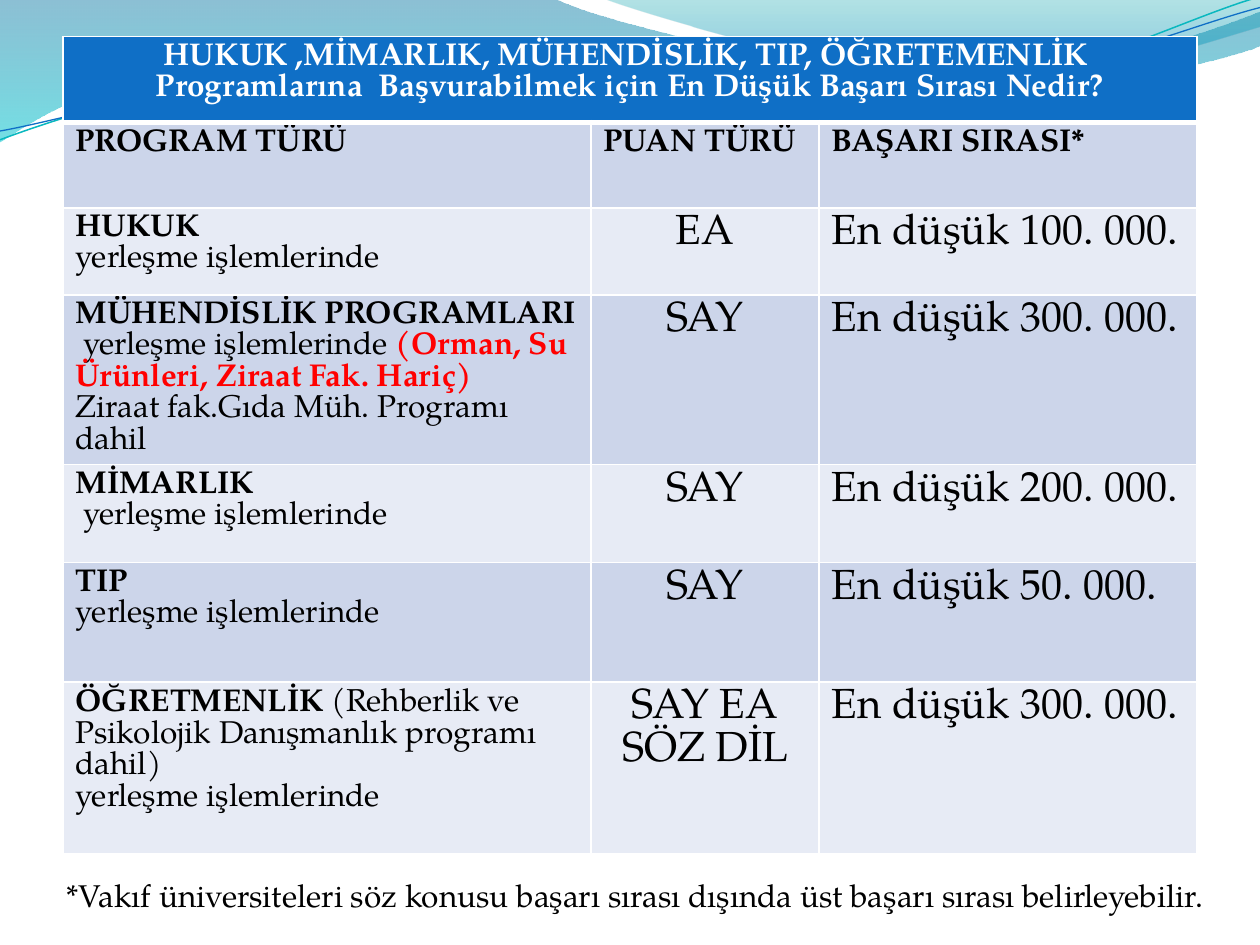
from dataclasses import dataclass

from lxml import etree
from pptx import Presentation
from pptx.dml.color import RGBColor
from pptx.enum import text
from pptx.oxml import ns
from pptx.util import Inches, Pt


@dataclass(frozen=True)
class Theme:
    font: str = "TeX Gyre Pagella"
    body: int = 18
    large: int = 24
    white: str = "FFFFFF"
    black: str = "000000"
    red: str = "FF0000"
    blue: str = "0F6FC6"
    aqua: str = "0AB8BF"
    bands: tuple = ("CCD5EA", "E7EBF5")
    # gradient stops: position %, colour, opacity %
    wave: tuple = ((0, "0074A1", 45), (100, "00C6CF", 55))
    crest: tuple = ((0, "00A1A9", 30), (80, "008BBF", 45))


THEME = Theme()

# Each step is a line end (x, y) or a Bézier step (x1, y1, x2, y2, x, y).
WAVE = [(0, 0), (4.4, -0.01), (4.76, 0.17, 6.64, 0.63, 7.58, 0.63),
        (8.53, 0.63, 9.58, 0.26, 10, 0.09), (10.01, 0.36),
        (9.83, 0.44, 8.7, 0.76, 7.46, 0.75), (6.22, 0.75, 3.82, 0.28, 2.57, 0.34),
        (1.29, 0.36, 0.46, 0.83, -0.01, 1.13)]
CREST = [(4.79, -0.01), (5.09, 0.11, 6.82, 0.62, 7.69, 0.65),
         (8.56, 0.69, 9.61, 0.32, 10, 0.21), (10, 0)]
AQUA_LINE = [(0, 1.11), (0.48, 0.93, 1.58, 0.57, 2.77, 0.52),
             (3.95, 0.47, 5.93, 0.89, 7.13, 0.8), (8.33, 0.71, 9.38, 0.15, 9.98, -0.02)]
BLUE_LINE = [(0, 1.04), (0.47, 0.96, 1.64, 0.61, 2.83, 0.56),
             (4.03, 0.51, 5.97, 0.84, 7.17, 0.75), (8.36, 0.67, 9.41, 0.21, 10, 0.06)]

COLUMNS = (4.19, 1.81, 3)
ROWS = (0.68, 0.68, 0.69, 1.34, 0.78, 0.95, 1.36)
TITLE = ("HUKUK ,MİMARLIK, MÜHENDİSLİK, TIP, ÖĞRETEMENLİK ",
         "Programlarına  Başvurabilmek için En Düşük Başarı Sırası Nedir?")
HEADINGS = ("PROGRAM TÜRÜ", "PUAN TÜRÜ", "BAŞARI SIRASI*")
PLACEMENT = "yerleşme işlemlerinde"
# Program paragraphs as (text, bold, colour) spans, then score type and rank.
PROGRAMS = [
    ([[("HUKUK", True)], [(PLACEMENT, False)]], "EA", "100. 000."),
    ([[("MÜHENDİSLİK PROGRAMLARI", True)],
      [(" ", True), (PLACEMENT + " ", False),
       ("(Orman, Su Ürünleri, Ziraat Fak. Hariç)", True, THEME.red)],
      [("Ziraat fak.Gıda Müh. Programı dahil", False)]], "SAY", "300. 000."),
    ([[("MİMARLIK", True)], [(" " + PLACEMENT, False)]], "SAY", "200. 000."),
    ([[("TIP", True)], [(PLACEMENT, False)]], "SAY", "50. 000."),
    ([[("ÖĞRETMENLİK", True),
       (" (Rehberlik ve Psikolojik Danışmanlık programı dahil)", False)],
      [(PLACEMENT, False)]], "SAY EA SÖZ DİL", "300. 000."),
]
FOOTNOTE = ("*Vakıf üniversiteleri söz konusu başarı sırası dışında "
            "üst başarı sırası belirleyebilir.")


def rgb(colour):
    return RGBColor.from_string(colour)


def add_curve(page, steps, close):
    """Build a freeform through the step ends, then bend its Bézier steps."""
    ends = [(Inches(step[-2]), Inches(step[-1])) for step in steps]
    builder = page.shapes.build_freeform(*ends[0])
    builder.add_line_segments(ends[1:], close=close)
    shape = builder.convert_to_shape()
    shape.shadow.inherit = False
    segments = list(shape.element.spPr.iter(ns.qn("a:lnTo")))
    for step, segment in zip(steps[1:], segments):
        if len(step) == 2:
            continue
        segment.tag = ns.qn("a:cubicBezTo")
        for place, (x, y) in enumerate((step[:2], step[2:4])):
            point = etree.Element(ns.qn("a:pt"), x=str(Inches(x) - shape.left),
                                  y=str(Inches(y) - shape.top))
            segment.insert(place, point)
    return shape


def add_wave(page, steps, stops):
    """Add a closed shape with a translucent top-to-bottom gradient."""
    shape = add_curve(page, steps, True)
    shape.line.fill.background()
    shape.fill.gradient()
    gradient = shape.element.spPr.find(ns.qn("a:gradFill"))
    stop_list = gradient.find(ns.qn("a:gsLst"))
    for stop in list(stop_list):
        stop_list.remove(stop)
    for position, colour, opacity in stops:
        stop = etree.SubElement(stop_list, ns.qn("a:gs"), pos=str(position * 1000))
        tint = etree.SubElement(stop, ns.qn("a:srgbClr"), val=colour)
        etree.SubElement(tint, ns.qn("a:alpha"), val=str(opacity * 1000))
    gradient.find(ns.qn("a:lin")).set("ang", str(90 * 60000))


def add_wave_line(page, steps, colour, width):
    shape = add_curve(page, steps, False)
    shape.fill.background()
    shape.line.color.rgb = rgb(colour)
    shape.line.width = Pt(width)


def style_cell(cell, colour, bottom=1):
    properties = cell._tc.get_or_add_tcPr()
    for side, width in (("L", 1), ("R", 1), ("T", 1), ("B", bottom)):
        border = etree.SubElement(properties, ns.qn("a:ln" + side), w=str(Pt(width)))
        fill = etree.SubElement(border, ns.qn("a:solidFill"))
        etree.SubElement(fill, ns.qn("a:srgbClr"), val=THEME.white)
    cell.fill.solid()
    cell.fill.fore_color.rgb = rgb(colour)


def write(frame, paragraphs, size=THEME.body, colour=THEME.black, centred=False):
    for index, spans in enumerate(paragraphs):
        para = frame.paragraphs[0] if index == 0 else frame.add_paragraph()
        para.alignment = text.PP_ALIGN.CENTER if centred else text.PP_ALIGN.LEFT
        para.font.name = THEME.font
        para.font.size = Pt(size)
        para.font.color.rgb = rgb(colour)
        same_weight = len({bold for _, bold, *_ in spans}) == 1
        if same_weight:
            para.font.bold = spans[0][1]
        for words, bold, *accent in spans:
            span = para.add_run()
            span.text = words
            if not same_weight:
                span.font.bold = bold
            if accent:
                span.font.color.rgb = rgb(accent[0])


def add_rank_table(page):
    frame = page.shapes.add_table(len(ROWS), len(COLUMNS), Inches(0.5), Inches(0.29),
                                  Inches(sum(COLUMNS)), Inches(sum(ROWS)))
    table = frame.table
    for column, width in zip(table.columns, COLUMNS):
        column.width = Inches(width)
    for row, height in zip(table.rows, ROWS):
        row.height = Inches(height)

    for index, row in enumerate(table.rows):
        for cell in row.cells:
            if index == 0:
                style_cell(cell, THEME.blue, bottom=3)
            else:
                style_cell(cell, THEME.bands[(index - 1) % 2])

    title = table.cell(0, 0)
    title.merge(table.cell(0, len(COLUMNS) - 1))
    write(title.text_frame, [[(line, True)] for line in TITLE],
          colour=THEME.white, centred=True)
    for column, heading in enumerate(HEADINGS):
        write(table.cell(1, column).text_frame, [[(heading, True)]])
    for row, (program, score, rank) in enumerate(PROGRAMS, start=2):
        write(table.cell(row, 0).text_frame, program)
        write(table.cell(row, 1).text_frame, [[(score, False)]], THEME.large, centred=True)
        write(table.cell(row, 2).text_frame, [[("En düşük " + rank, False)]], THEME.large)


def add_footnote(page):
    box = page.shapes.add_textbox(Inches(0.43), Inches(6.9), Inches(9.29), Inches(0.4))
    box.text_frame.word_wrap = True
    box.text_frame.auto_size = text.MSO_AUTO_SIZE.SHAPE_TO_FIT_TEXT
    write(box.text_frame, [[(FOOTNOTE, False)]])


def main():
    deck = Presentation()
    deck.slide_width, deck.slide_height = Inches(10), Inches(7.5)
    page = deck.slides.add_slide(deck.slide_layouts[6])
    add_wave(page, WAVE, THEME.wave)
    add_wave(page, CREST, THEME.crest)
    add_wave_line(page, AQUA_LINE, THEME.aqua, 0.85)
    add_wave_line(page, BLUE_LINE, THEME.blue, 0.75)
    add_rank_table(page)
    add_footnote(page)
    deck.save("out.pptx")


if __name__ == "__main__":
    main()
